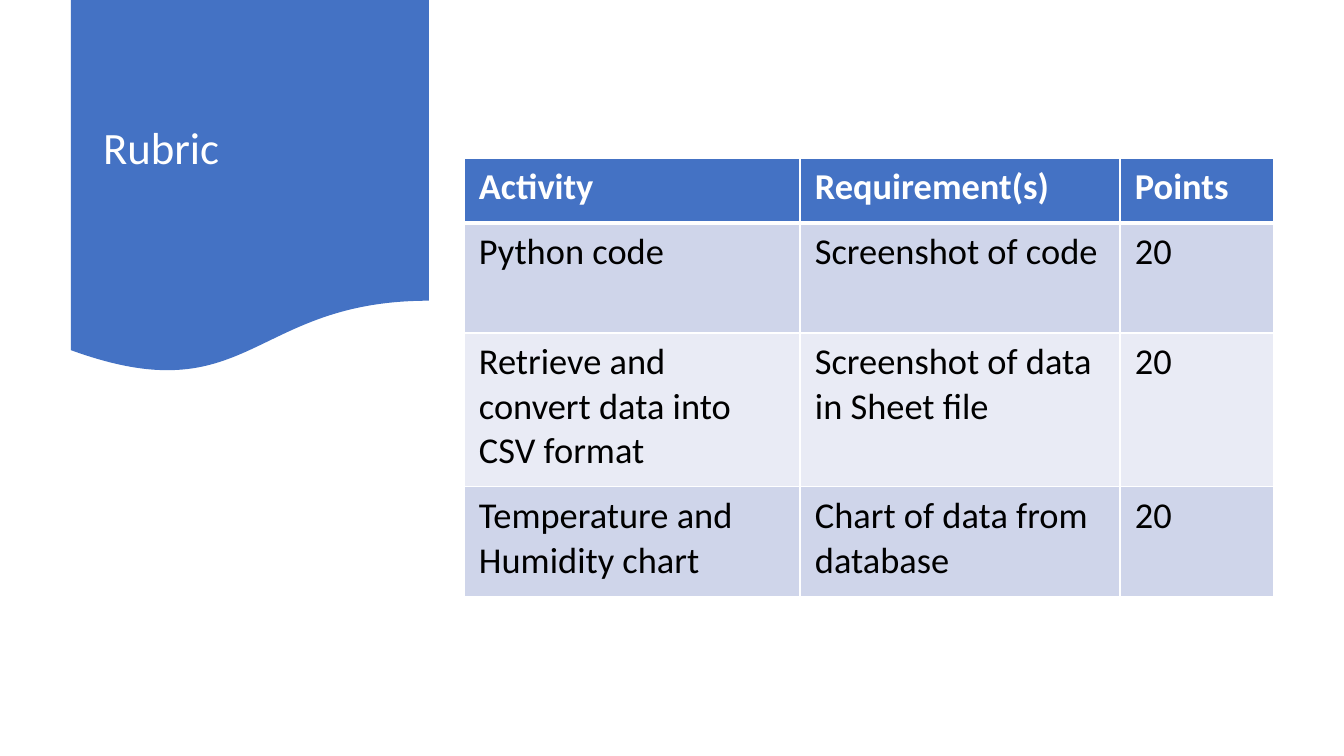
from lxml import etree
from pptx import Presentation
from pptx.dml.color import RGBColor
from pptx.enum.shapes import MSO_SHAPE
from pptx.enum.text import MSO_ANCHOR, MSO_AUTO_SIZE, PP_ALIGN
from pptx.oxml.ns import qn
from pptx.util import Pt

BLUE = RGBColor(0x44, 0x72, 0xC4)
DARK_BAND = RGBColor(0xCF, 0xD5, 0xEA)
LIGHT_BAND = RGBColor(0xE9, 0xEB, 0xF5)
WHITE = RGBColor(0xFF, 0xFF, 0xFF)
BLACK = RGBColor(0, 0, 0)
DOCUMENT = MSO_SHAPE.FLOWCHART_DOCUMENT
MIDDLE, LEFT, NO_FIT = MSO_ANCHOR.MIDDLE, PP_ALIGN.LEFT, MSO_AUTO_SIZE.NONE

HEADING = "Rubric"
RUBRIC = [
    ("Activity", "Requirement(s)", "Points"),
    ("Python code", "Screenshot of code", "20"),
    ("Retrieve and convert data into CSV format", "Screenshot of data in Sheet file", "20"),
    ("Temperature and Humidity chart", "Chart of data from database", "20"),
]

EMU_PER_PX = 914400 / 100.8
SLIDE_SIZE = (1344, 756)
BANNER_BOX = (71, 0, 358, 375)
HEADING_BOX = (93, 19, 313, 261)
TABLE_ORIGIN = (464, 158)
COLUMN_WIDTHS = (336, 320, 154)
ROW_HEIGHTS = (65, 110, 154, 110)
CELL_INSETS = {"margin_left": 15, "margin_right": 15, "margin_top": 7, "margin_bottom": 7}
HEADING_FONT = {"name": "Calibri", "size": Pt(32), "bold": False}
CELL_FONT = {"name": "Calibri", "size": Pt(26)}


def px(length):
    return round(length * EMU_PER_PX)


def set_all(target, values):
    for name, value in values.items():
        setattr(target, name, value)


def place(shape, box):
    set_all(shape, dict(zip(("left", "top", "width", "height"), map(px, box))))


def add_borders(cell, widths):
    """Draw white cell edges; widths maps L, R, T and B to points, in that order."""
    for side, points in widths.items():
        edge = etree.SubElement(cell._tc.get_or_add_tcPr(), qn(f"a:ln{side}"), w=str(Pt(points)))
        fill = etree.SubElement(edge, qn("a:solidFill"))
        etree.SubElement(fill, qn("a:srgbClr"), val=str(WHITE))


def add_heading(slide):
    heading = slide.shapes.title
    banner = slide.shapes.add_shape(DOCUMENT, *map(px, BANNER_BOX))
    banner.shadow.inherit = False
    banner.fill.solid()
    banner.fill.fore_color.rgb = BLUE
    banner.line.fill.background()
    heading.element.addprevious(banner.element)

    place(heading, HEADING_BOX)
    heading.text = HEADING
    set_all(heading.text_frame,
            {"vertical_anchor": MIDDLE, "word_wrap": True, "auto_size": NO_FIT})
    paragraph = heading.text_frame.paragraphs[0]
    set_all(paragraph, {"alignment": LEFT, "line_spacing": 0.9})
    font = paragraph.runs[0].font
    set_all(font, HEADING_FONT)
    font.color.rgb = WHITE


def fill_cell(cell, text, row):
    is_header = row == 0
    cell.text = text
    set_all(cell, {side: px(inset) for side, inset in CELL_INSETS.items()})
    add_borders(cell, {"L": 1, "R": 1, "T": 3 if row == 1 else 1, "B": 3 if is_header else 1})
    cell.fill.solid()
    cell.fill.fore_color.rgb = BLUE if is_header else (LIGHT_BAND, DARK_BAND)[row % 2]
    font = cell.text_frame.paragraphs[0].runs[0].font
    set_all(font, {**CELL_FONT, "bold": is_header})
    font.color.rgb = WHITE if is_header else BLACK


def add_rubric(slide):
    size = (sum(COLUMN_WIDTHS), sum(ROW_HEIGHTS))
    table = slide.shapes.add_table(
        len(RUBRIC), len(COLUMN_WIDTHS), *map(px, TABLE_ORIGIN + size)).table
    for column, width in zip(table.columns, COLUMN_WIDTHS):
        column.width = px(width)
    for row, height in zip(table.rows, ROW_HEIGHTS):
        row.height = px(height)
    for row, entries in enumerate(RUBRIC):
        for column, text in enumerate(entries):
            fill_cell(table.cell(row, column), text, row)


def main():
    deck = Presentation()
    deck.slide_width, deck.slide_height = map(px, SLIDE_SIZE)
    slide = deck.slides.add_slide(deck.slide_layouts.get_by_name("Title Only"))
    add_heading(slide)
    add_rubric(slide)
    deck.save("out.pptx")


if __name__ == "__main__":
    main()
